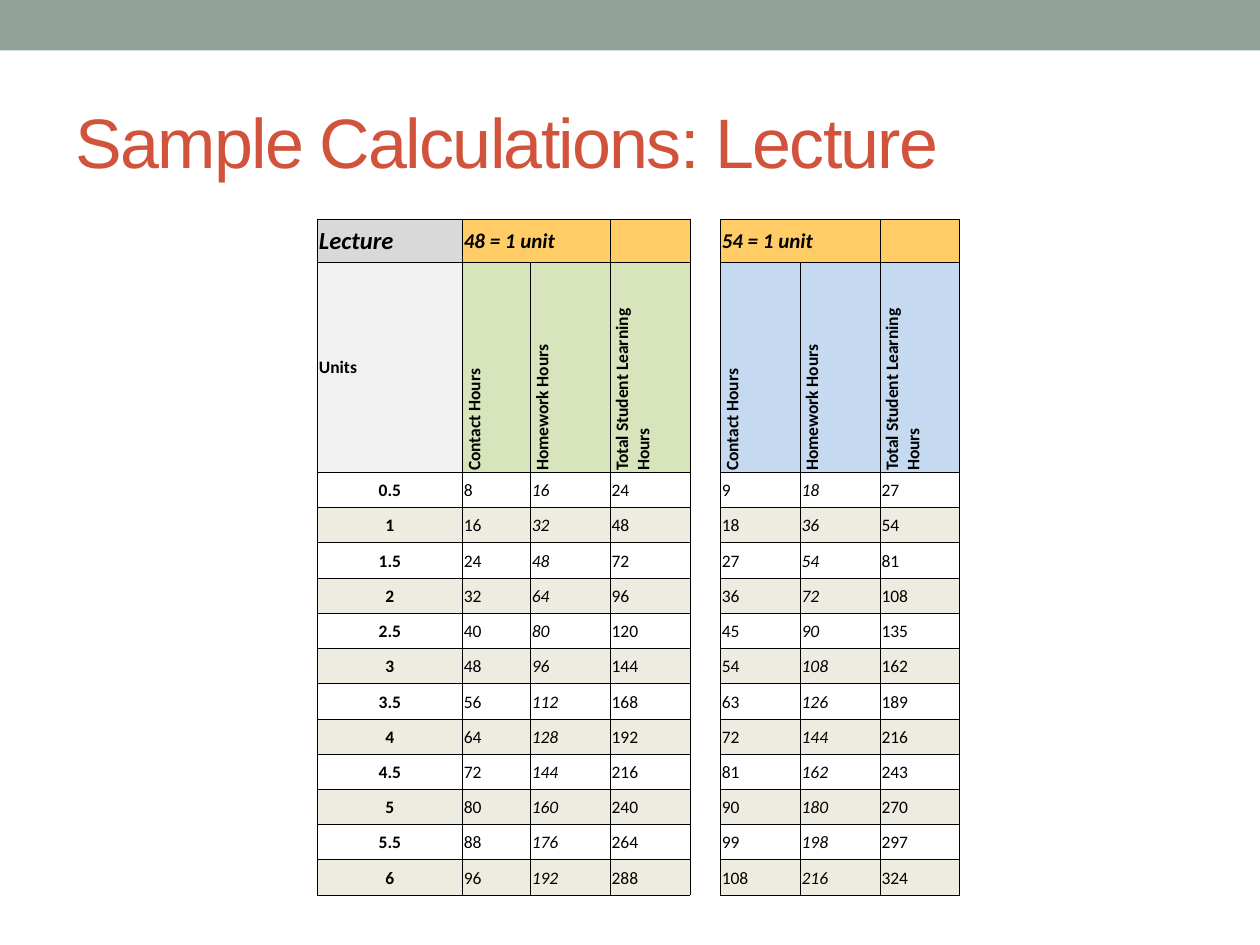
from dataclasses import dataclass

from lxml.etree import SubElement
from pptx import Presentation
from pptx.dml.color import RGBColor
from pptx.enum.shapes import MSO_SHAPE as Shape
from pptx.enum.text import MSO_ANCHOR as Anchor, PP_ALIGN as Align
from pptx.oxml.ns import qn
from pptx.util import Cm, Pt


@dataclass(frozen=True)
class Theme:
    """Colours, fonts and type sizes of the slide."""
    band: str = "93A299"
    title: str = "D2533C"
    ink: str = "000000"
    corner: str = "D9D9D9"
    units: str = "F2F2F2"
    rate: str = "FFCC66"
    stripe: str = "EEECE1"
    green: str = "D8E4BC"
    blue: str = "C5D9F1"
    title_font: str = "Arial"
    table_font: str = "Calibri"
    title_size: int = 40
    corner_size: int = 14
    rate_size: int = 12
    cell_size: int = 10
    rule: float = 0.5


THEME = Theme()
HEADINGS = ("Contact Hours", "Homework Hours", "Total Student Learning Hours")
COLUMNS = (2.92, 1.37, 1.61, 1.61, 0.61, 1.61, 1.61, 1.61)
UNITS = [step / 2 for step in range(1, 13)]
ROWS = (0.86, 4.04) + (0.71,) * len(UNITS)
GAP_COLUMN = 4
GROUPS = ((1, 48, THEME.green), (5, 54, THEME.blue))


def write(frame, text, *, font, size, color, bold=False, italic=False, align=Align.LEFT, spacing=0):
    """Write one formatted paragraph into a text frame."""
    para = frame.paragraphs[0]
    para.alignment = align
    span = para.add_run()
    span.text = text
    span.font.name, span.font.size = font, Pt(size)
    span.font.bold, span.font.italic = bold, italic
    span.font.color.rgb = RGBColor.from_string(color)
    if spacing:
        span.font._element.set("spc", str(round(spacing * 100)))


def add_band(page, left, top, width, height):
    """Draw the coloured band along the top edge."""
    band = page.shapes.add_shape(Shape.RECTANGLE, Cm(left), Cm(top), Cm(width), Cm(height))
    band.shadow.inherit = False
    band.fill.solid()
    band.fill.fore_color.rgb = RGBColor.from_string(THEME.band)
    band.line.fill.background()


def add_title(page, left, top, width, height, text):
    """Place and fill the title placeholder."""
    title = page.shapes.title
    title.left, title.top, title.width, title.height = Cm(left), Cm(top), Cm(width), Cm(height)
    title.text_frame.vertical_anchor = Anchor.MIDDLE
    write(title.text_frame, text, font=THEME.title_font, size=THEME.title_size,
          color=THEME.title, spacing=-1)


def set_borders(cell, ruled):
    """Rule the named sides of a cell and clear the others."""
    properties = cell._tc.get_or_add_tcPr()
    for side in "LRTB":
        line = SubElement(properties, qn(f"a:ln{side}"), w=str(Pt(THEME.rule)))
        if side in ruled:
            color = SubElement(SubElement(line, qn("a:solidFill")), qn("a:srgbClr"))
            color.set("val", THEME.ink)
        else:
            SubElement(line, qn("a:noFill"))


def format_cell(cell, text="", *, fill=None, ruled="LRTB", size=THEME.cell_size, bold=False,
                italic=False, align=Align.JUSTIFY, upright=False):
    """Format one table cell and write its text."""
    set_borders(cell, ruled)
    cell.margin_left = cell.margin_right = cell.margin_top = Cm(0.03)
    cell.margin_bottom = 0
    cell.vertical_anchor = Anchor.BOTTOM if upright else Anchor.MIDDLE
    if upright:
        cell._tc.get_or_add_tcPr().set("vert", "vert270")
    if fill:
        cell.fill.solid()
        cell.fill.fore_color.rgb = RGBColor.from_string(fill)
    else:
        cell.fill.background()
    if text:
        write(cell.text_frame, text, font=THEME.table_font, size=size, color=THEME.ink,
              bold=bold, italic=italic, align=align)
    else:
        SubElement(cell.text_frame.paragraphs[0]._p, qn("a:endParaRPr"), sz=str(size * 100))


def fill_group(table, first, hours, tint):
    """Fill the three columns for one definition of a unit."""
    rate = dict(fill=THEME.rate, size=THEME.rate_size, bold=True, italic=True)
    table.cell(0, first).merge(table.cell(0, first + 1))
    for offset, text in enumerate((f"{hours} = 1 unit", "", "")):
        format_cell(table.cell(0, first + offset), text, **rate)
    for offset, heading in enumerate(HEADINGS):
        format_cell(table.cell(1, first + offset), heading, fill=tint, bold=True,
                    align=Align.LEFT, upright=True)
        for index, units in enumerate(UNITS):
            value = units * hours * (offset + 1) / len(HEADINGS)
            format_cell(table.cell(index + 2, first + offset), f"{value:g}",
                        fill=THEME.stripe if index % 2 else None, italic=offset == 1)


def add_hours_table(page, left, top):
    """Build the table of lecture hours by units."""
    table = page.shapes.add_table(len(ROWS), len(COLUMNS), Cm(left), Cm(top),
                                  Cm(sum(COLUMNS)), Cm(sum(ROWS))).table
    table.first_row = table.horz_banding = False
    for column, width in zip(table.columns, COLUMNS):
        column.width = Cm(width)
    for row, height in zip(table.rows, ROWS):
        row.height = Cm(height)
    format_cell(table.cell(0, 0), "Lecture", fill=THEME.corner, size=THEME.corner_size,
                bold=True, italic=True)
    format_cell(table.cell(1, 0), "Units", fill=THEME.units, bold=True)
    for index, units in enumerate(UNITS):
        format_cell(table.cell(index + 2, 0), f"{units:g}", bold=True, align=Align.CENTER,
                    fill=THEME.stripe if index % 2 else None)
    for index in range(len(ROWS)):
        format_cell(table.cell(index, GAP_COLUMN), ruled="LR")
    for group in GROUPS:
        fill_group(table, *group)


def main():
    """Build and save the slide."""
    deck = Presentation()
    deck.slide_width, deck.slide_height = Cm(25.4), Cm(19.05)
    page = deck.slides.add_slide(deck.slide_layouts[5])
    add_band(page, 0, 0, 25.4, 1.02)
    add_title(page, 1.27, 1.47, 22.86, 2.74, "Sample Calculations: Lecture")
    add_hours_table(page, 6.4, 4.42)
    deck.save("out.pptx")


if __name__ == "__main__":
    main()
